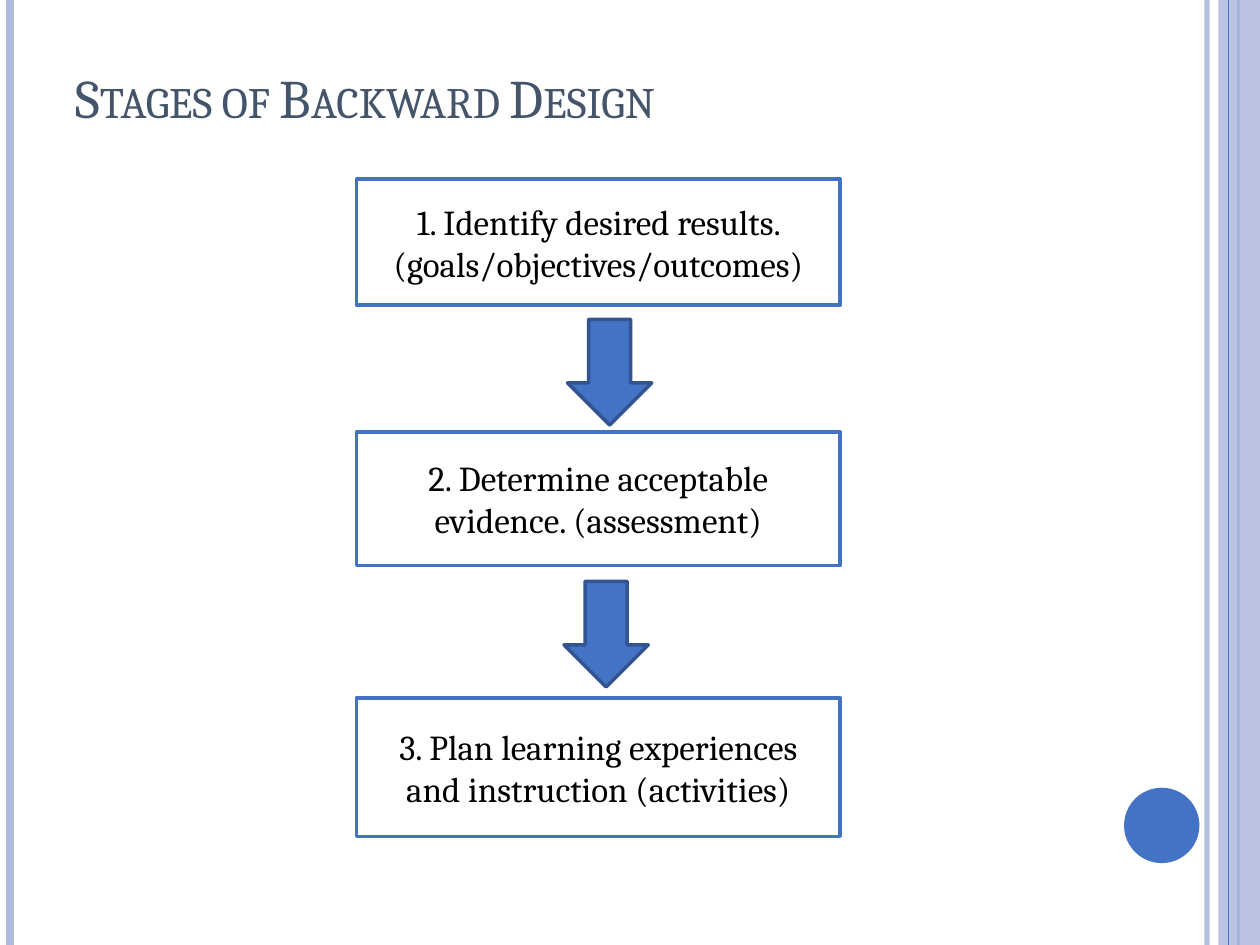
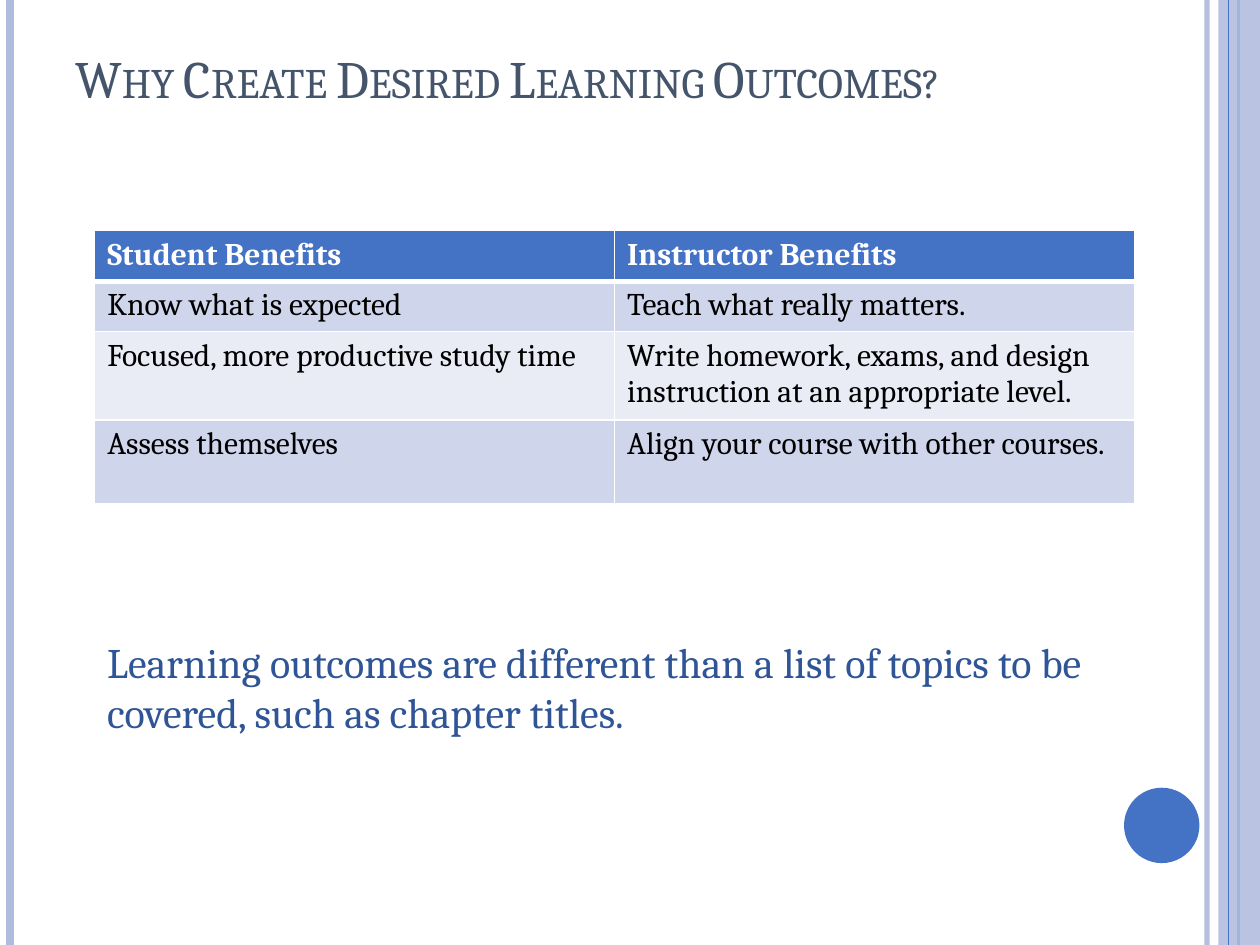
from typing import NamedTuple

from lxml.etree import SubElement
from pptx import Presentation
from pptx.dml.color import RGBColor
from pptx.enum.shapes import MSO_CONNECTOR, MSO_SHAPE
from pptx.enum.text import MSO_ANCHOR, PP_ALIGN
from pptx.oxml import parse_xml
from pptx.oxml.ns import nsdecls, qn
from pptx.shapes.autoshape import Shape
from pptx.slide import Slide
from pptx.table import _Cell
from pptx.text.text import TextFrame, _Paragraph
from pptx.util import Cm, Pt

FONT = "Cambria"
BLACK = RGBColor(0x00, 0x00, 0x00)
WHITE = RGBColor(0xFF, 0xFF, 0xFF)
BLUE = RGBColor(0x44, 0x72, 0xC4)
ARROW_EDGE = RGBColor(0x32, 0x54, 0x91)
STATEMENT_BLUE = RGBColor(0x2F, 0x55, 0x97)
PALE_BLUE = RGBColor(0xB0, 0xBC, 0xDE)
TITLE_SLATE = RGBColor(0x44, 0x54, 0x6A)
ROW_DARK = RGBColor(0xCF, 0xD5, 0xEA)
ROW_LIGHT = RGBColor(0xE9, 0xEB, 0xF5)

PAGE_WIDTH = 25.4
PAGE_HEIGHT = 19.05


class Area(NamedTuple):
    """Left, top, width and height in centimetres."""

    left: float
    top: float
    width: float
    height: float

    def lengths(self) -> tuple[Cm, ...]:
        """Return the four values as lengths."""
        return tuple(Cm(value) for value in self)


class TextStyle(NamedTuple):
    """Look of one run of text."""

    size: float
    color: RGBColor
    bold: bool = False
    small_caps: bool = False


class Rule(NamedTuple):
    """Vertical line that runs down the whole page."""

    x: float
    color: RGBColor
    weight: float
    opacity: int = 100


class Stage(NamedTuple):
    """Boxed step of the design process."""

    text: str
    area: Area


class BenefitRow(NamedTuple):
    """Table row with its height, fill and text style."""

    student: str
    instructor: str
    height: float
    fill: RGBColor
    style: TextStyle


RULES_BELOW_BAND = (
    Rule(24.33, PALE_BLUE, 3, 93),
    Rule(0.2, PALE_BLUE, 4.5),
    Rule(24.97, BLUE, 1.5),
)
RULE_ON_BAND = Rule(24.77, BLUE, 0.75)
BAND = Area(24.56, 0, PAGE_WIDTH - 24.56, PAGE_HEIGHT)
DISC = Area(22.66, 15.88, 1.52, 1.52)

STAGE_STYLE = TextStyle(20, BLACK)
STAGES = (
    Stage("1. Identify desired results. (goals/objectives/outcomes)",
          Area(7.19, 3.61, 9.75, 2.54)),
    Stage("2. Determine acceptable evidence. (assessment)",
          Area(7.19, 8.71, 9.75, 2.69)),
    Stage("3. Plan learning experiences and instruction (activities)",
          Area(7.19, 14.07, 9.75, 2.79)),
)
STAGE_ARROWS = (Area(11.44, 6.44, 1.7, 2.13), Area(11.37, 11.72, 1.7, 2.13))

HEADER_STYLE = TextStyle(18, WHITE, bold=True)
CELL_STYLE = TextStyle(18, BLACK)
BENEFITS = (
    BenefitRow("Student Benefits", "Instructor Benefits", 1.02, BLUE, HEADER_STYLE),
    BenefitRow("Know what is expected", "Teach what really matters.",
               1, ROW_DARK, CELL_STYLE),
    BenefitRow("Focused, more productive study time",
               "Write homework, exams, and design instruction at an appropriate level.",
               1.72, ROW_LIGHT, CELL_STYLE),
    BenefitRow("Assess themselves", "Align your course with other courses.",
               1.69, ROW_DARK, CELL_STYLE),
)
TABLE_LEFT, TABLE_TOP, COLUMN_WIDTH = 1.91, 4.65, 10.48


def add_span(para: _Paragraph, text: str, style: TextStyle) -> None:
    """Append one styled run to a paragraph."""
    span = para.add_run()
    span.text = text
    span.font.name = FONT
    span.font.size = Pt(style.size)
    span.font.bold = style.bold
    span.font.color.rgb = style.color
    if style.small_caps:
        span.font._element.set("cap", "small")


def fill_frame(frame: TextFrame, text: str, style: TextStyle,
               anchor: MSO_ANCHOR, align: PP_ALIGN = PP_ALIGN.LEFT) -> _Paragraph:
    """Write one wrapped paragraph into a text frame."""
    frame.word_wrap = True
    frame.vertical_anchor = anchor
    para = frame.paragraphs[0]
    para.alignment = align
    add_span(para, text, style)
    return para


def set_opacity(properties, percent: int) -> None:
    """Make the first solid colour below an element translucent."""
    color = next(properties.iter(qn("a:srgbClr")))
    SubElement(color, qn("a:alpha")).set("val", str(percent * 1000))


def add_rule(page: Slide, rule: Rule) -> None:
    """Draw one vertical page rule."""
    line = page.shapes.add_connector(
        MSO_CONNECTOR.STRAIGHT, Cm(rule.x), Cm(0), Cm(rule.x), Cm(PAGE_HEIGHT))
    line.line.color.rgb = rule.color
    line.line.width = Pt(rule.weight)
    properties = line._element.spPr
    if rule.opacity < 100:
        set_opacity(properties, rule.opacity)
    SubElement(properties, qn("a:effectLst"))


def add_figure(page: Slide, kind: MSO_SHAPE, area: Area, fill: RGBColor,
               edge: RGBColor | None = None) -> Shape:
    """Draw a filled preset shape, outlined when an edge colour is given."""
    figure = page.shapes.add_shape(kind, *area.lengths())
    figure.shadow.inherit = False
    figure.fill.solid()
    figure.fill.fore_color.rgb = fill
    if edge is None:
        figure.line.fill.background()
    else:
        figure.line.color.rgb = edge
        figure.line.width = Pt(2)
    return figure


def add_text(page: Slide, area: Area, text: str, style: TextStyle,
             anchor: MSO_ANCHOR = MSO_ANCHOR.TOP) -> _Paragraph:
    """Add a text box and return its paragraph."""
    box = page.shapes.add_textbox(*area.lengths())
    return fill_frame(box.text_frame, text, style, anchor)


def add_page(deck: Presentation, title: str, area: Area, size: float) -> Slide:
    """Add a page with the shared decoration and a title."""
    page = deck.slides.add_slide(deck.slide_layouts[6])
    for rule in RULES_BELOW_BAND:
        add_rule(page, rule)
    band = add_figure(page, MSO_SHAPE.RECTANGLE, BAND, PALE_BLUE)
    set_opacity(band._element.spPr, 87)
    add_rule(page, RULE_ON_BAND)
    add_figure(page, MSO_SHAPE.OVAL, DISC, BLUE)
    style = TextStyle(size, TITLE_SLATE, small_caps=True)
    add_text(page, area, title, style, MSO_ANCHOR.BOTTOM)
    return page


def set_borders(cell: _Cell, top: float, bottom: float) -> None:
    """Give a cell white borders with the given top and bottom weights."""
    properties = cell._tc.get_or_add_tcPr()
    weights = {"lnL": 1, "lnR": 1, "lnT": top, "lnB": bottom}
    for position, (side, weight) in enumerate(weights.items()):
        border = parse_xml(
            f'<a:{side} {nsdecls("a")} w="{Pt(weight)}"><a:solidFill>'
            f'<a:srgbClr val="{WHITE}"/></a:solidFill></a:{side}>')
        properties.insert(position, border)


def add_benefits_table(page: Slide) -> None:
    """Add the table of student and instructor benefits."""
    area = Area(TABLE_LEFT, TABLE_TOP, 2 * COLUMN_WIDTH,
                sum(benefit.height for benefit in BENEFITS))
    table = page.shapes.add_table(len(BENEFITS), 2, *area.lengths()).table
    table.horz_banding = False
    for column in table.columns:
        column.width = Cm(COLUMN_WIDTH)
    for index, benefit in enumerate(BENEFITS):
        table.rows[index].height = Cm(benefit.height)
        for cell, text in zip(table.rows[index].cells,
                              (benefit.student, benefit.instructor)):
            cell.fill.solid()
            cell.fill.fore_color.rgb = benefit.fill
            set_borders(cell, top=3 if index == 1 else 1, bottom=3 if index == 0 else 1)
            add_span(cell.text_frame.paragraphs[0], text, benefit.style)


def build_stages_page(deck: Presentation) -> None:
    """Build the page with the three design stages."""
    page = add_page(deck, "Stages of Backward Design",
                    Area(1.27, 0.76, 20.75, 1.98), 31)
    for stage in STAGES:
        box = add_figure(page, MSO_SHAPE.RECTANGLE, stage.area, WHITE, BLUE)
        fill_frame(box.text_frame, stage.text, STAGE_STYLE,
                   MSO_ANCHOR.MIDDLE, PP_ALIGN.CENTER)
    for area in STAGE_ARROWS:
        add_figure(page, MSO_SHAPE.DOWN_ARROW, area, BLUE, ARROW_EDGE)


def build_benefits_page(deck: Presentation) -> None:
    """Build the page on the benefits of learning outcomes."""
    page = add_page(deck, "Why Create Desired Learning Outcomes?",
                    Area(1.27, 0.76, 22.86, 1.57), 30)
    statement = add_text(
        page, Area(1.91, 12.7, 21.59, 2.54),
        "Learning outcomes are different than a list of topics to be covered, "
        "such as chapter titles.", TextStyle(24, STATEMENT_BLUE))
    statement.space_before = Pt(6)
    add_benefits_table(page)


def main() -> None:
    """Build and save the deck."""
    deck = Presentation()
    deck.slide_width = Cm(PAGE_WIDTH)
    deck.slide_height = Cm(PAGE_HEIGHT)
    build_stages_page(deck)
    build_benefits_page(deck)
    deck.save("out.pptx")


if __name__ == "__main__":
    main()
